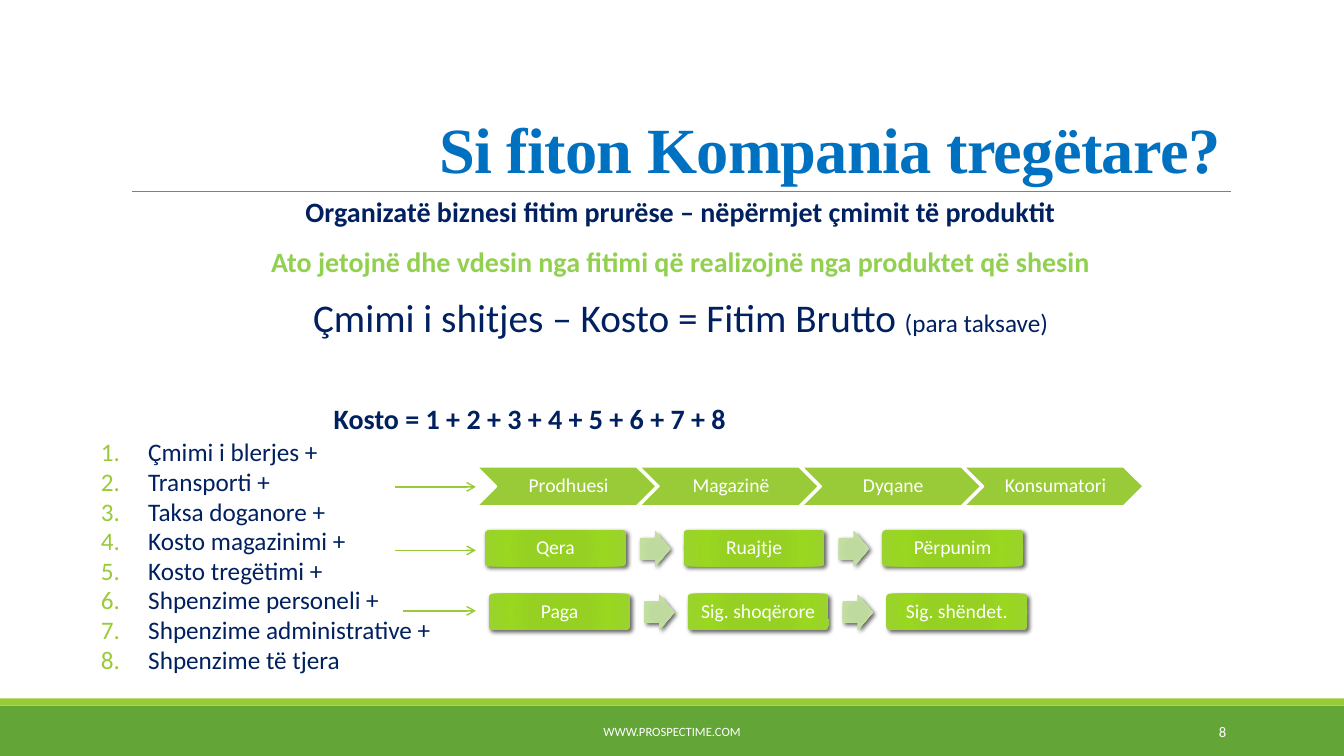
from dataclasses import dataclass

from lxml.etree import SubElement
from pptx import Presentation
from pptx.dml.color import RGBColor
from pptx.enum.shapes import MSO_CONNECTOR, MSO_SHAPE
from pptx.enum.text import MSO_ANCHOR, MSO_AUTO_SIZE, PP_ALIGN
from pptx.oxml.ns import qn
from pptx.util import Emu, Pt

PX = 9144  # 100 px to the inch


@dataclass(frozen=True)
class Theme:
    green: str = "99CB38"
    dark_green: str = "63A537"
    light_green: str = "92D050"
    blue: str = "0070C0"
    navy: str = "002060"
    gray: str = "808080"
    white: str = "FFFFFF"
    box_gradient: tuple = ((0, "95D220"), (34, "96D023"), (70, "99D720"), (100, "9BD231"))
    arrow_gradient: tuple = ((0, "BDD99C"), (34, "BFDA9E"), (70, "C2DF9F"), (100, "CAE4AC"))
    title_font: str = "Times New Roman"
    body_font: str = "Calibri"
    title_size: float = 46
    formula_size: float = 28
    lead_size: float = 20
    list_size: float = 18
    label_size: float = 14
    number_size: float = 10.5
    footer_size: float = 9


THEME = Theme()

COSTS = ["Çmimi i blerjes +", "Transporti +", "Taksa doganore +", "Kosto magazinimi +",
         "Kosto tregëtimi +", "Shpenzime personeli +", "Shpenzime administrative +",
         "Shpenzime të tjera"]
CHAIN = ["Prodhuesi", "Magazinë", "Dyqane", "Konsumatori"]
STORAGE = ["Qera", "Ruajtje", "Përpunim"]
STAFF = ["Paga", "Sig. shoqërore", "Sig. shëndet."]


def px(*lengths):
    return [Emu(length * PX) for length in lengths]


def rgb(color):
    return RGBColor.from_string(color)


def style_run(run, size, color, bold=False, font=THEME.body_font):
    run.font.name = font
    run.font.size = Pt(size)
    run.font.bold = bold
    run.font.color.rgb = rgb(color)


def set_insets(frame, left, top, right, bottom):
    (frame.margin_left, frame.margin_top,
     frame.margin_right, frame.margin_bottom) = px(left, top, right, bottom)


def place(shape, left, top, width, height):
    shape.left, shape.top, shape.width, shape.height = px(left, top, width, height)


def add_shape(slide, kind, box, color=None):
    shape = slide.shapes.add_shape(kind, *px(*box))
    shape.shadow.inherit = False
    shape.line.fill.background()
    if color:
        shape.fill.solid()
        shape.fill.fore_color.rgb = rgb(color)
    return shape


def add_label(shape, text, insets):
    frame = shape.text_frame
    set_insets(frame, *insets)
    frame.vertical_anchor = MSO_ANCHOR.MIDDLE
    frame.text = text
    paragraph = frame.paragraphs[0]
    paragraph.alignment = PP_ALIGN.CENTER
    paragraph.line_spacing = 0.9
    style_run(paragraph.runs[0], THEME.label_size, THEME.white)


def add_raised_shape(slide, kind, box, stops):
    """Shape with a radial gradient and a soft shadow."""
    shape = add_shape(slide, kind, box)
    properties = shape.element.spPr
    gradient = SubElement(properties, qn("a:gradFill"))
    stop_list = SubElement(gradient, qn("a:gsLst"))
    for position, color in stops:
        stop = SubElement(stop_list, qn("a:gs"), pos=str(position * 1000))
        SubElement(stop, qn("a:srgbClr"), val=color)
    path = SubElement(gradient, qn("a:path"), path="circle")
    SubElement(path, qn("a:fillToRect"), **dict.fromkeys("ltrb", "100000"))
    properties.find(qn("a:prstGeom")).addnext(gradient)

    effects = properties.find(qn("a:effectLst"))
    shadow = SubElement(effects, qn("a:outerShdw"), blurRad=str(Pt(3)), dist=str(Pt(2)),
                        dir="2700000", algn="tl", rotWithShape="0")
    shadow_color = SubElement(shadow, qn("a:srgbClr"), val="000000")
    SubElement(shadow_color, qn("a:alpha"), val="60000")
    return shape


def add_line(slide, start, end, color, width, arrow=False):
    line = slide.shapes.add_connector(MSO_CONNECTOR.STRAIGHT, *px(*start, *end))
    line.line.color.rgb = rgb(color)
    line.line.width = Pt(width)
    if arrow:
        SubElement(line.line._get_or_add_ln(), qn("a:tailEnd"), type="arrow")
    SubElement(line._element.spPr, qn("a:effectLst"))


def add_footer_text(slide, box, text, size, alignment):
    frame = slide.shapes.add_textbox(*px(*box)).text_frame
    frame.word_wrap = True
    frame.vertical_anchor = MSO_ANCHOR.MIDDLE
    frame.text = text
    frame.paragraphs[0].alignment = alignment
    style_run(frame.paragraphs[0].runs[0], size, THEME.white)


def format_paragraph(paragraph, before, after, spacing, alignment=PP_ALIGN.LEFT,
                     indent=0, numbered=False):
    properties = paragraph._p.get_or_add_pPr()
    properties.set("marL", str(indent * PX))
    properties.set("indent", str(-indent * PX if numbered else 0))
    if numbered:
        bullet_color = SubElement(properties, qn("a:buClr"))
        SubElement(bullet_color, qn("a:srgbClr"), val=THEME.green)
        SubElement(properties, qn("a:buFont"), typeface="+mj-lt")
        SubElement(properties, qn("a:buAutoNum"), type="arabicPeriod")
    else:
        SubElement(properties, qn("a:buNone"))
    paragraph.alignment = alignment
    paragraph.line_spacing = spacing
    paragraph.space_before = Pt(before)
    paragraph.space_after = Pt(after)


def fill_title(title):
    place(title, 120, 31, 1100, 159)
    frame = title.text_frame
    frame.text = "Si fiton Kompania tregëtare?"
    frame.auto_size = MSO_AUTO_SIZE.NONE
    frame.vertical_anchor = MSO_ANCHOR.BOTTOM
    paragraph = frame.paragraphs[0]
    paragraph.alignment = PP_ALIGN.RIGHT
    paragraph.line_spacing = 0.85
    run = paragraph.runs[0]
    style_run(run, THEME.title_size, THEME.blue, True, THEME.title_font)
    run.font._element.set("spc", "-50")


def fill_body(body):
    place(body, 100, 192, 1150, 476)
    frame = body.text_frame
    frame.auto_size = MSO_AUTO_SIZE.NONE
    frame.vertical_anchor = MSO_ANCHOR.TOP
    set_insets(frame, 0, 5, 0, 5)
    lead, navy = THEME.lead_size, THEME.navy
    # Each statement: space before, alignment, indent, runs
    statements = [
        (0, PP_ALIGN.CENTER, 0,
         [("Organizatë biznesi fitim prurëse – nëpërmjet çmimit të produktit", lead, navy, True)]),
        (12, PP_ALIGN.CENTER, 0,
         [("Ato jetojnë dhe vdesin nga fitimi që realizojnë nga produktet që shesin",
           lead, THEME.light_green, True)]),
        (12, PP_ALIGN.CENTER, 0,
         [("Çmimi i shitjes – Kosto = Fitim Brutto ", THEME.formula_size, navy, False),
          ("(para taksave)", THEME.list_size, navy, False)]),
        (44, PP_ALIGN.LEFT, 231,
         [("Kosto = 1 + 2 + 3 + 4 + 5 + 6 + 7 + 8", lead, navy, True)]),
    ]
    for index, (before, alignment, indent, runs) in enumerate(statements):
        paragraph = frame.add_paragraph() if index else frame.paragraphs[0]
        format_paragraph(paragraph, before, 2, 0.9, alignment, indent)
        for text, *style in runs:
            run = paragraph.add_run()
            run.text = text
            style_run(run, *style)
    for cost in COSTS:
        paragraph = frame.add_paragraph()
        paragraph.text = cost
        format_paragraph(paragraph, 0, 0, 0.98, indent=47, numbered=True)
        style_run(paragraph.runs[0], THEME.list_size, navy)


def add_chevron_chain(slide, left, top, labels):
    for index, label in enumerate(labels):
        chevron = add_shape(slide, MSO_SHAPE.CHEVRON, (left + 161 * index, top, 178, 39), THEME.green)
        chevron.line.color.rgb = rgb(THEME.white)
        chevron.line.width = Pt(1.25)
        add_label(chevron, label, (6, 2, 2, 2))


def add_box_chain(slide, left, top, labels):
    for index, label in enumerate(labels):
        box_left = left + 197 * index
        if index:
            arrow = add_raised_shape(slide, MSO_SHAPE.RIGHT_ARROW,
                                     (box_left - 43, top + 1, 30, 35), THEME.arrow_gradient)
            arrow.adjustments[0] = 0.6
        box = add_raised_shape(slide, MSO_SHAPE.ROUNDED_RECTANGLE,
                               (box_left, top, 140, 36), THEME.box_gradient)
        box.adjustments[0] = 0.1
        add_label(box, label, (6, 6, 6, 6))


def main():
    presentation = Presentation()
    presentation.slide_width, presentation.slide_height = px(1333, 750)
    slide = presentation.slides.add_slide(presentation.slide_layouts[1])

    # Footer bands and title rule
    add_shape(slide, MSO_SHAPE.RECTANGLE, (0, 700, 1333, 50), THEME.dark_green)
    add_shape(slide, MSO_SHAPE.RECTANGLE, (0, 693, 1333, 7), THEME.green)
    add_line(slide, (131, 190), (1221, 190), THEME.gray, 0.5)
    add_footer_text(slide, (403, 706, 527, 40), "WWW.PROSPECTIME.COM",
                    THEME.footer_size, PP_ALIGN.CENTER)
    add_footer_text(slide, (1083, 706, 143, 40), "8", THEME.number_size, PP_ALIGN.RIGHT)

    # Title and text
    fill_title(slide.shapes.title)
    fill_body(slide.placeholders[1])

    # Process rows and the arrows leading to them
    add_chevron_chain(slide, 473, 463, CHAIN)
    add_box_chain(slide, 481, 526, STORAGE)
    add_box_chain(slide, 485, 589, STAFF)
    for left, y in ((392, 483), (392, 546), (400, 606)):
        add_line(slide, (left, y), (472, y), THEME.green, 1, arrow=True)

    presentation.save("out.pptx")


if __name__ == "__main__":
    main()
